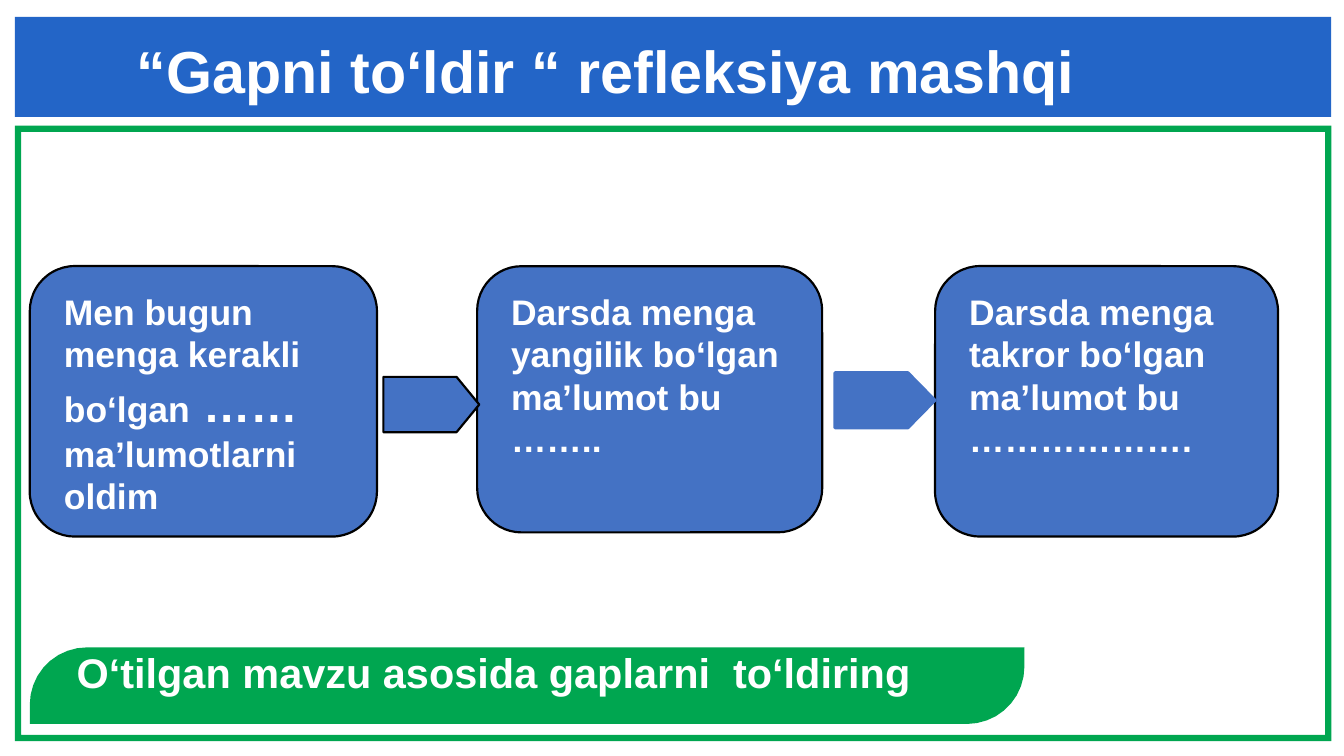
import math
import pptx
import pptx.util
import pptx.dml.color
import pptx.enum.shapes
import pptx.enum.text

Inches = pptx.util.Inches
SHAPE = pptx.enum.shapes.MSO_SHAPE
ALIGN = pptx.enum.text.PP_ALIGN
ANCHOR = pptx.enum.text.MSO_ANCHOR
COLORS = {"banner": "2365C7", "green": "00A650", "box": "4472C4",
          "outline": "000000", "text": "FFFFFF"}


def paint(shape, fill, line=None, width=0.75):
    shape.shadow.inherit = False
    shape.fill.solid()
    shape.fill.fore_color.rgb = pptx.dml.color.RGBColor.from_string(COLORS[fill])
    if line:
        shape.line.color.rgb = pptx.dml.color.RGBColor.from_string(COLORS[line])
        shape.line.width = pptx.util.Pt(width)
    else:
        shape.line.fill.background()


def write(shape, spans, align, frame_format):
    for name, value in frame_format.items():
        setattr(shape.text_frame, name, value)
    para = shape.text_frame.paragraphs[0]
    para.alignment = align
    for text, size in spans:
        span = para.add_run()
        span.text = text
        font_format = {"name": "Arial", "size": pptx.util.Pt(size), "bold": True}
        for name, value in font_format.items():
            setattr(span.font, name, value)
        span.font.color.rgb = pptx.dml.color.RGBColor.from_string(COLORS["text"])
    return para


deck = pptx.Presentation()
deck.slide_width, deck.slide_height = Inches(6.31), Inches(3.55)
page = deck.slides.add_slide(deck.slide_layouts[6])
shapes = page.shapes

# Green frame and title banner
border = shapes.add_shape(SHAPE.FRAME, Inches(0.07), Inches(0.59), Inches(6.18), Inches(2.89))
border.adjustments[0] = 0.01
paint(border, "green")
banner = shapes.add_shape(SHAPE.RECTANGLE, Inches(0.07), Inches(0.08), Inches(6.18), Inches(0.47))
paint(banner, "banner")

# Task strip with two opposite rounded corners
left, top, right, bottom, radius = 0.14, 3.04, 4.81, 3.40, 0.27
angles = [math.radians(degrees) for degrees in range(0, 91, 10)]
outline = [(left + radius - radius * math.sin(a), top + radius - radius * math.cos(a))
           for a in angles]
outline += [(left, bottom)]
outline += [(right - radius + radius * math.sin(a), bottom - radius + radius * math.cos(a))
            for a in angles]
outline += [(right, top)]
points = [(Inches(x), Inches(y)) for x, y in outline]
builder = shapes.build_freeform(*points[0])
builder.add_line_segments(points[1:], close=True)
strip = builder.convert_to_shape()
paint(strip, "green")
strip_format = {"margin_left": Inches(0.22), "margin_right": 0, "margin_top": 0,
                "margin_bottom": 0, "vertical_anchor": ANCHOR.TOP, "word_wrap": True}
write(strip, [("O‘tilgan mavzu asosida gaplarni  to‘ldiring", 14)], ALIGN.LEFT, strip_format)

# Sentences to complete
sentences = [
    (0.14, 1.63, 1.27, [("Men bugun menga kerakli bo‘lgan", 12), (" ……  ", 16),
                        ("ma’lumotlarni oldim", 12)]),
    (2.24, 1.62, 1.25, [("Darsda menga yangilik bo‘lgan ma’lumot bu ……..", 12)]),
    (4.39, 1.61, 1.27, [("Darsda menga takror bo‘lgan ma’lumot bu ……………….", 12)]),
]
for x, width, height, spans in sentences:
    box = shapes.add_shape(SHAPE.ROUNDED_RECTANGLE, Inches(x), Inches(1.25),
                           Inches(width), Inches(height))
    paint(box, "box", "outline")
    write(box, spans, ALIGN.LEFT, {"vertical_anchor": ANCHOR.TOP, "word_wrap": True})

# Arrows between the sentences
for x, y, width, point, line, weight in [(1.80, 1.77, 0.45, 0.41, "outline", 0.75),
                                         (3.92, 1.75, 0.47, 0.49, "box", 1)]:
    arrow = shapes.add_shape(SHAPE.PENTAGON, Inches(x), Inches(y), Inches(width), Inches(0.26))
    arrow.adjustments[0] = point
    paint(arrow, "box", line, weight)

# Title
title = shapes.add_textbox(Inches(0.28), Inches(0.11), Inches(5.21), Inches(0.44))
write(title, [("“Gapni to‘ldir “ refleksiya mashqi ", 20)], ALIGN.CENTER,
      {"vertical_anchor": ANCHOR.MIDDLE, "word_wrap": True})

deck.save("out.pptx")
